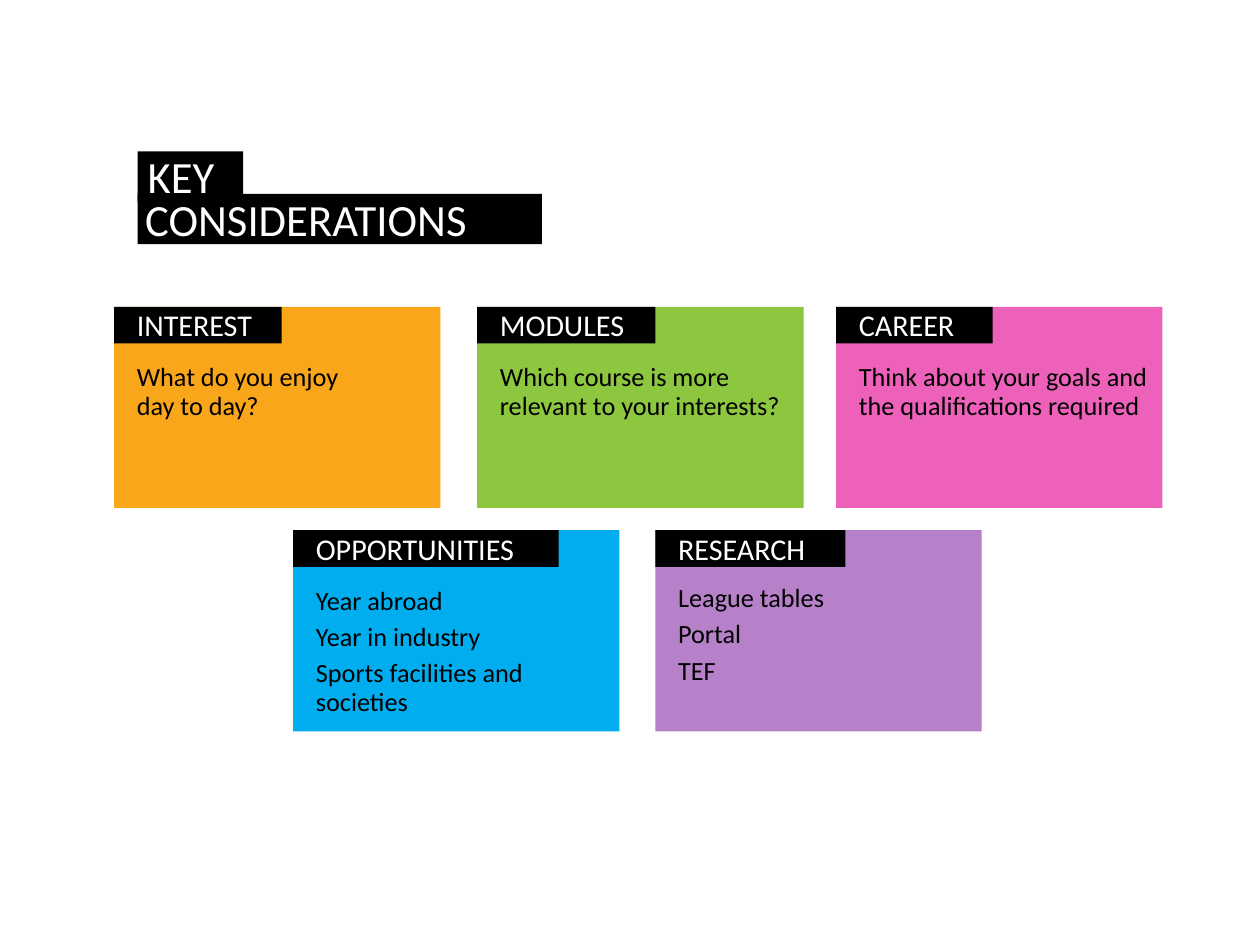
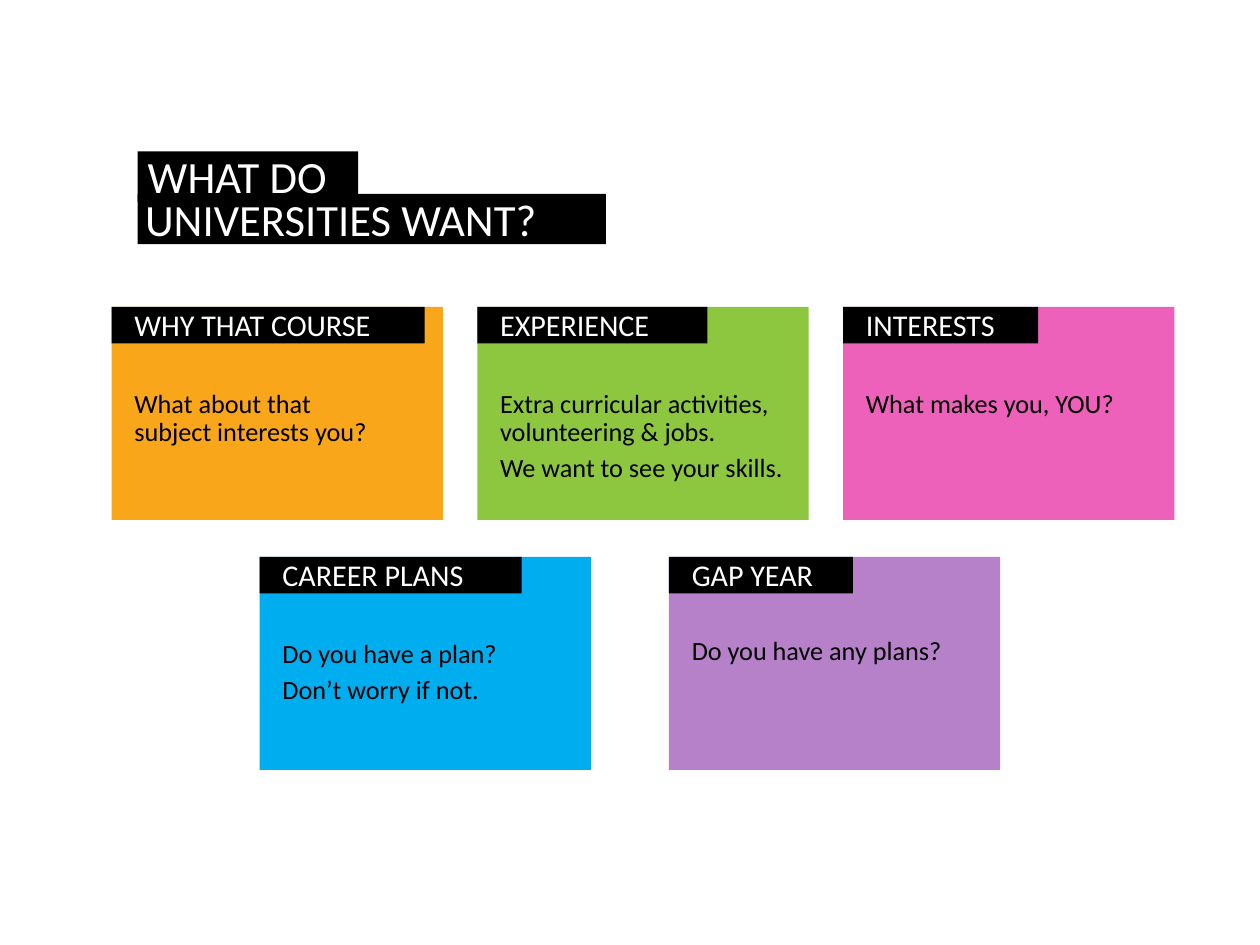
import itertools
from dataclasses import dataclass

import lxml.etree
import pptx
import pptx.dml.color
import pptx.enum.shapes
import pptx.enum.text
import pptx.oxml.ns
import pptx.presentation
import pptx.shapes.autoshape
import pptx.slide
import pptx.util

Pt = pptx.util.Pt

COLOURS = {
    "black": "000000",
    "white": "FFFFFF",
    "orange": "FAA61A",
    "green": "8DC63F",
    "pink": "ED61BA",
    "blue": "00AEEF",
    "purple": "B781CA",
}
CARD_COLOURS = ("orange", "green", "pink", "blue", "purple")
FONT = "Calibri"
TITLE_LEFT, TITLE_HEIGHT = 78.6, 28.8
TITLE_TOPS = (86.6, 110.8)
TITLE_INDENTS = (5.8, 4.3)
LABEL_HEIGHT = 20.9
CARD_INDENT = 13


@dataclass
class Box:
    left: float
    top: float
    width: float
    height: float


@dataclass
class TextStyle:
    size: float
    colour: str
    left_inset: float
    top_inset: float = 2.2
    right_inset: float = 0
    space_after: float = 0


@dataclass
class TitleLine:
    text: str
    width: float


@dataclass
class Card:
    label: str
    label_width: float
    lines: list[str]


@dataclass
class CardPage:
    title: list[TitleLine]
    card_size: tuple[float, float]
    rows: dict[float, tuple[float, ...]]  # row top -> card lefts
    text_insets: tuple[float, ...]
    cards: list[Card]


PAGES = [
    CardPage(
        title=[TitleLine("KEY", 60.4), TitleLine("CONSIDERATIONS", 231)],
        card_size=(186.5, 115),
        rows={175.3: (65.2, 272.7, 477.8), 303: (167.5, 374.5)},
        text_insets=(32.8, 32.8, 32.8, 32.8, 31.3),
        cards=[
            Card("INTEREST", 95.8, ["What do you enjoy\vday to day?"]),
            Card("MODULES", 101.9, ["Which course is more relevant to your interests?"]),
            Card("CAREER", 89.4, ["Think about your goals and the qualifications required"]),
            Card("OPPORTUNITIES", 151.8,
                 ["Year abroad", "Year in industry", "Sports facilities and societies"]),
            Card("RESEARCH", 108.6, ["League tables", "Portal", "TEF"]),
        ],
    ),
    CardPage(
        title=[TitleLine("WHAT DO", 126), TitleLine("UNIVERSITIES WANT?", 267.7)],
        card_size=(189.3, 121.8),
        rows={175.3: (63.8, 272.8, 481.8), 318.2: (148.4, 382.3)},
        text_insets=(47.8, 47.8, 47.8, 47.8, 46.3),
        cards=[
            Card("WHY THAT COURSE", 178.9, ["What about that\vsubject interests you?"]),
            Card("EXPERIENCE", 131.4,
                 ["Extra curricular activities,\vvolunteering & jobs.",
                  "We want to see your skills."]),
            Card("INTERESTS", 111.4, ["What makes you, YOU?"]),
            Card("CAREER PLANS", 149.7, ["Do you have a plan?", "Don’t worry if not."]),
            Card("GAP YEAR", 105.1, ["Do you have any plans?"]),
        ],
    ),
]


def colour(name: str) -> pptx.dml.color.RGBColor:
    return pptx.dml.color.RGBColor.from_string(COLOURS[name])


def write_text(shape: pptx.shapes.autoshape.Shape, lines: list[str], style: TextStyle) -> None:
    frame = shape.text_frame
    frame.word_wrap = True
    frame.vertical_anchor = pptx.enum.text.MSO_ANCHOR.TOP
    frame.margin_left, frame.margin_top = Pt(style.left_inset), Pt(style.top_inset)
    frame.margin_right, frame.margin_bottom = Pt(style.right_inset), 0
    frame.text = "\n".join(lines)
    for paragraph in frame.paragraphs:
        paragraph.alignment = pptx.enum.text.PP_ALIGN.LEFT
        paragraph.line_spacing = 0.9
        paragraph.space_after = Pt(style.space_after)
        for span in paragraph.runs:
            span.font.name = FONT
            span.font.size = Pt(style.size)
            span.font.color.rgb = colour(style.colour)
        # A line break carries its own text size.
        for line_break in paragraph._p.findall(pptx.oxml.ns.qn("a:br")):
            lxml.etree.SubElement(line_break, pptx.oxml.ns.qn("a:rPr"),
                                  sz=str(int(style.size * 100)))


def add_panel(page: pptx.slide.Slide, box: Box, fill: str,
              lines: list[str], style: TextStyle) -> None:
    """Draw a filled rectangle without outline that holds the lines."""
    shape = page.shapes.add_shape(pptx.enum.shapes.MSO_SHAPE.RECTANGLE, Pt(box.left),
                                  Pt(box.top), Pt(box.width), Pt(box.height))
    shape.shadow.inherit = False
    shape.fill.solid()
    shape.fill.fore_color.rgb = colour(fill)
    shape.line.fill.background()
    write_text(shape, lines, style)


def add_title(page: pptx.slide.Slide, title: list[TitleLine]) -> None:
    for line, top, indent in zip(title, TITLE_TOPS, TITLE_INDENTS):
        add_panel(page, Box(TITLE_LEFT, top, line.width, TITLE_HEIGHT), "black",
                  [line.text], TextStyle(25.5, "white", indent))


def add_card(page: pptx.slide.Slide, card: Card, box: Box, fill: str, top_inset: float) -> None:
    add_panel(page, box, fill, card.lines,
              TextStyle(15, "black", CARD_INDENT, top_inset, right_inset=5, space_after=4.5))
    add_panel(page, Box(box.left, box.top, card.label_width, LABEL_HEIGHT), "black",
              [card.label], TextStyle(17.2, "white", CARD_INDENT))


def add_card_page(deck: pptx.presentation.Presentation, content: CardPage) -> None:
    page = deck.slides.add_slide(deck.slide_layouts[6])
    add_title(page, content.title)
    corners = itertools.chain.from_iterable(
        ((left, top) for left in lefts) for top, lefts in content.rows.items())
    for card, corner, fill, inset in zip(content.cards, list(corners), CARD_COLOURS,
                                         content.text_insets):
        add_card(page, card, Box(*corner, *content.card_size), fill, inset)


def main() -> None:
    deck = pptx.Presentation()
    deck.slide_width, deck.slide_height = Pt(720), Pt(540)
    for content in PAGES:
        add_card_page(deck, content)
    deck.save("out.pptx")


if __name__ == "__main__":
    main()
